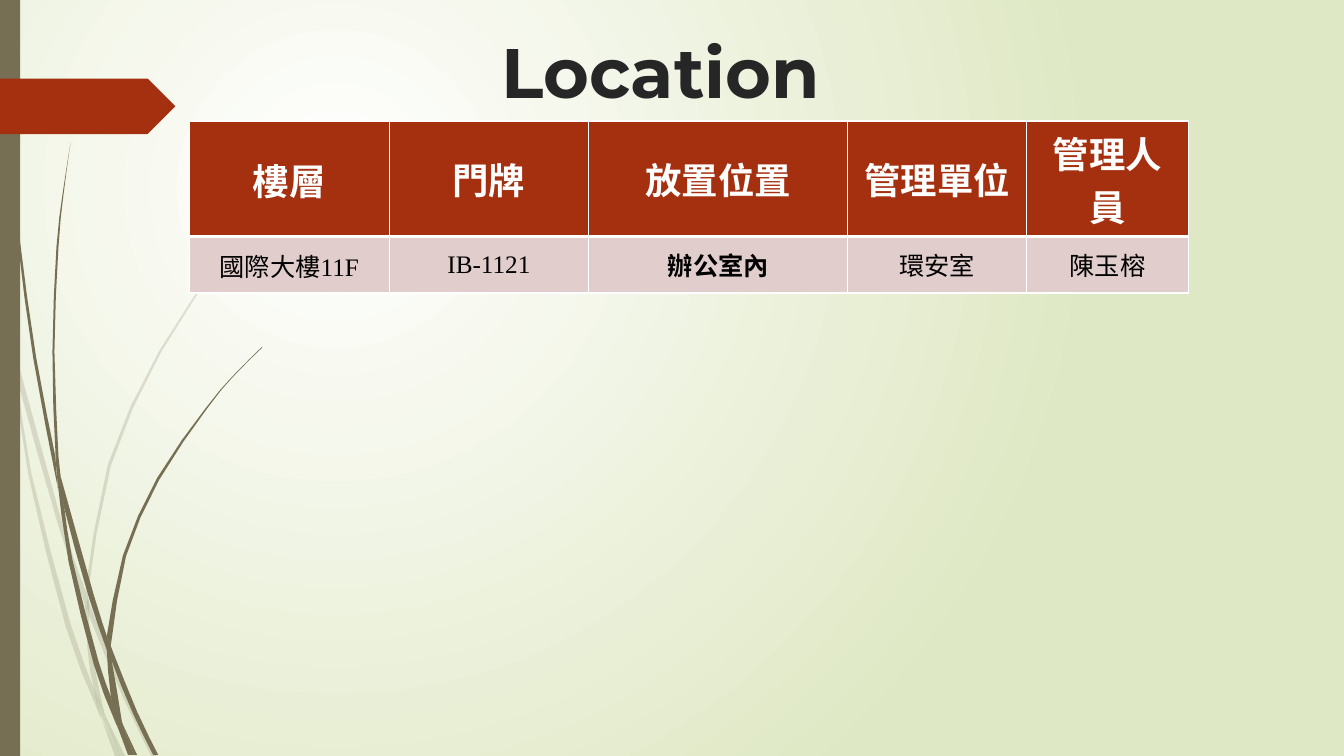
from lxml import etree
from pptx import Presentation
from pptx.dml.color import RGBColor
from pptx.enum.shapes import MSO_SHAPE
from pptx.enum.text import MSO_ANCHOR, PP_ALIGN
from pptx.oxml.ns import qn
from pptx.util import Inches, Pt

CENTER, MIDDLE = PP_ALIGN.CENTER, MSO_ANCHOR.MIDDLE
RECT, PENTAGON = MSO_SHAPE.RECTANGLE, MSO_SHAPE.PENTAGON
SLIDE_W, SLIDE_H = 13.33, 7.5
UNITS = 1000  # freeform units per inch
COLORS = {"white": "FFFFFF", "meadow": "DFE8C4", "olive": "766F54", "rust": "A53010",
          "title": "262626", "pink": "E1CDCC", "black": "000000"}
HEAD_FONT, BODY_FONT = "League Spartan", "Times New Roman"

# Each piece of grass: knots of its left edge, then of its right edge, from the top down
FAINT_GRASS = [
    ([(0, 2.82), (0, 2.99), (0.1, 3.44), (0.11, 3.5)], [(0, 2.82), (0.09, 3.22), (0.11, 3.5)]),
    ([(0.14, 3.45), (0.17, 3.76), (0.58, 5.22), (0.84, 5.99)],
     [(0.14, 3.45), (0.62, 5.2), (0.85, 5.86)]),
    ([(0.88, 5.96), (0.88, 6.1), (1.23, 6.94), (1.5, 7.5)],
     [(0.88, 5.96), (0.92, 6.07), (1.27, 6.92), (1.55, 7.5)]),
    ([(1.05, 7.11), (1.19, 7.5)], [(1.05, 7.11), (1.24, 7.5)]),
    ([(0.11, 3.5), (0.28, 4.7), (0.65, 6.21), (0.92, 6.93), (1.01, 7.14)],
     [(0.11, 3.5), (0.17, 3.76), (0.31, 4.69), (0.7, 6.19), (0.93, 6.83), (0.99, 7.07)]),
    ([(0.84, 5.99), (0.87, 6.46), (0.93, 6.83), (1.05, 7.11)],
     [(0.84, 5.99), (0.88, 6.1), (0.91, 6.46), (1.03, 7.06)]),
    ([(3.12, 1.53), (2.68, 1.97), (2.28, 2.44), (1.58, 3.48), (1.07, 4.61), (0.85, 5.84)],
     [(3.12, 1.54), (2.68, 1.98), (2.29, 2.45), (1.6, 3.49), (1.1, 4.62), (0.88, 5.84),
      (0.88, 5.96)]),
    ([(1.01, 7.14), (1.14, 7.5)], [(1.01, 7.14), (1.19, 7.5)]),
    ([(0.85, 5.86), (0.84, 5.99), (0.88, 6.08)], [(0.85, 5.86), (0.88, 5.96), (0.88, 6.1)]),
    ([(0.93, 6.83), (0.99, 7.07), (1.19, 7.5)], [(0.93, 6.83), (1.05, 7.11), (1.19, 7.5)]),
]
SOLID_GRASS = [
    ([(0.03, 0), (0.07, 1.1), (0.17, 2.33), (0.33, 3.55), (0.56, 4.77), (0.57, 4.81)],
     [(0.04, 0), (0.08, 1.09), (0.19, 2.32), (0.36, 3.55), (0.55, 4.53)]),
    ([(0.6, 4.72), (0.64, 5.05), (0.88, 5.92), (1.06, 6.45)],
     [(0.6, 4.72), (0.93, 5.9), (1.06, 6.31)]),
    ([(1.1, 6.41), (1.11, 6.56), (1.32, 7.08), (1.52, 7.49)],
     [(1.1, 6.41), (1.13, 6.49), (1.36, 7.06), (1.57, 7.49)]),
    ([(0.57, 4.77), (0.68, 5.57), (0.93, 6.59), (1.11, 7.08), (1.17, 7.22)],
     [(0.57, 4.77), (0.64, 5.05), (0.72, 5.56), (0.98, 6.57), (1.1, 6.91), (1.16, 7.17)]),
    ([(0.7, 1.41), (0.62, 1.93), (0.56, 2.45), (0.52, 3.49), (0.55, 4.49), (0.6, 4.72)],
     [(0.7, 1.41), (0.63, 1.93), (0.58, 2.45), (0.54, 3.49), (0.58, 4.53)]),
    ([(1.22, 7.19), (1.33, 7.49)], [(1.22, 7.19), (1.36, 7.49)]),
    ([(0.55, 4.49), (0.57, 4.77), (0.64, 5.05)], [(0.55, 4.49), (0.6, 4.72)]),
    ([(2.6, 3.44), (2.31, 3.73), (2.04, 4.05), (1.56, 4.74), (1.22, 5.51), (1.06, 6.31)],
     [(2.6, 3.45), (2.31, 3.74), (2.05, 4.06), (1.58, 4.76), (1.25, 5.52), (1.11, 6.33),
      (1.1, 6.41)]),
    ([(1.17, 7.22), (1.27, 7.49)], [(1.17, 7.22), (1.31, 7.49)]),
    ([(1.06, 6.45), (1.1, 6.91), (1.22, 7.19)], [(1.06, 6.45), (1.11, 6.56), (1.21, 7.16)]),
    ([(1.06, 6.31), (1.06, 6.45), (1.11, 6.56)], [(1.06, 6.31), (1.1, 6.41)]),
    ([(1.1, 6.91), (1.17, 7.22), (1.3, 7.49)], [(1.1, 6.91), (1.22, 7.19), (1.33, 7.49)]),
]

COLUMNS = [1.98, 1.98, 2.57, 1.77, 1.61]
ROWS = [1.14, 0.56]
CELLS = [["樓層", "門牌", "放置位置", "管理單位", "管理人員"],
         ["國際大樓11F", "IB-1121", "辦公室內", "環安室", "陳玉榕"]]
BOLD_COLUMN = 2


def rgb(name):
    return RGBColor.from_string(COLORS[name])


def style_text(tf, size, font, color, bold):
    p = tf.paragraphs[0]
    p.alignment = CENTER
    f = p.runs[0].font
    f.size, f.name, f.bold = Pt(size), font, bold
    f.color.rgb = rgb(color)


def paint(sp, color, alpha=None):
    sp.shadow.inherit = False
    sp.fill.solid()
    sp.fill.fore_color.rgb = rgb(color)
    sp.line.fill.background()
    if alpha is not None:
        clr = next(sp.element.spPr.iter(qn("a:srgbClr")))
        etree.SubElement(clr, qn("a:alpha"), val=str(alpha * 1000))


def add_background(slide):
    fill = slide.background.fill
    fill.gradient()
    for stop, color in zip(fill.gradient_stops, ("white", "meadow")):
        stop.color.rgb = rgb(color)
    lin = next(slide.element.iter(qn("a:lin")))
    radial = etree.Element(qn("a:path"), path="circle")
    etree.SubElement(radial, qn("a:fillToRect"), l="50000", t="50000", r="100000", b="100000")
    lin.getparent().replace(lin, radial)


def smooth_edge(knots):
    """The knots, with the middle of a Catmull-Rom curve between each two."""
    padded = [knots[0]] + knots + [knots[-1]]
    points = [knots[0]]
    for a, b, c, d in zip(padded, padded[1:], padded[2:], padded[3:]):
        points.append(tuple((9 * (q + r) - p - s) / 16 for p, q, r, s in zip(a, b, c, d)))
        points.append(c)
    return points


def add_grass(slide, pieces, alpha=None):
    group = slide.shapes.add_group_shape()
    for left, right in pieces:
        outline = [(x * UNITS, y * UNITS) for x, y in smooth_edge(left) + smooth_edge(right)[::-1]]
        builder = group.shapes.build_freeform(*outline[0], scale=Inches(1) / UNITS)
        builder.add_line_segments(outline[1:], close=True)
        paint(builder.convert_to_shape(), "olive", alpha)


def add_block(slide, kind, box, color):
    paint(slide.shapes.add_shape(kind, *map(Inches, box)), color)


def add_title(slide, text, box):
    s = slide.shapes.title
    s.left, s.top, s.width, s.height = map(Inches, box)
    tf = s.text_frame
    tf.text = text
    tf.vertical_anchor = MIDDLE
    style_text(tf, 50, "Montserrat", "title", True)
    slide.shapes.element.append(s.element)  # in front of the grass


def add_borders(cell, widths):
    tc_pr = cell._tc.get_or_add_tcPr()
    for i, (side, width) in enumerate(zip("LRTB", widths)):
        ln = etree.Element(qn("a:ln" + side), w=str(Pt(width)))
        solid = etree.SubElement(ln, qn("a:solidFill"))
        etree.SubElement(solid, qn("a:srgbClr"), val=COLORS["white"])
        tc_pr.insert(i, ln)


def add_location_table(slide, left, top):
    box = map(Inches, (left, top, sum(COLUMNS), sum(ROWS)))
    table = slide.shapes.add_table(len(ROWS), len(COLUMNS), *box).table
    for column, width in zip(table.columns, COLUMNS):
        column.width = Inches(width)
    for r, height in enumerate(ROWS):
        table.rows[r].height = Inches(height)
        header = r == 0
        for c, text in enumerate(CELLS[r]):
            cell = table.cell(r, c)
            cell.text = text
            cell.vertical_anchor = MIDDLE
            if c == 0:
                cell.margin_left = cell.margin_right = cell.margin_top = Inches(0.01)
                cell.margin_bottom = 0
            cell.fill.solid()
            cell.fill.fore_color.rgb = rgb("rust" if header else "pink")
            bold = header or c == BOLD_COLUMN
            style_text(cell.text_frame, 26 if header else 18, HEAD_FONT if bold else BODY_FONT,
                       "white" if header else "black", bold)
            add_borders(cell, (1, 1, 1, 3) if header else (1, 1, 3, 1))


def build_location_slide(prs):
    slide = prs.slides.add_slide(prs.slide_layouts[5])
    add_background(slide)
    # Grass and side bar
    add_grass(slide, FAINT_GRASS, alpha=20)
    add_grass(slide, SOLID_GRASS)
    add_block(slide, RECT, (0, 0, 0.2, SLIDE_H), "olive")
    add_block(slide, PENTAGON, (0, 0.78, 1.74, 0.55), "rust")
    # Title and table
    add_title(slide, "Location", (1.88, 0.21, 9.35, 0.97))
    add_location_table(slide, 1.88, 1.2)


prs = Presentation()
prs.slide_width, prs.slide_height = Inches(SLIDE_W), Inches(SLIDE_H)
build_location_slide(prs)
prs.save("out.pptx")
